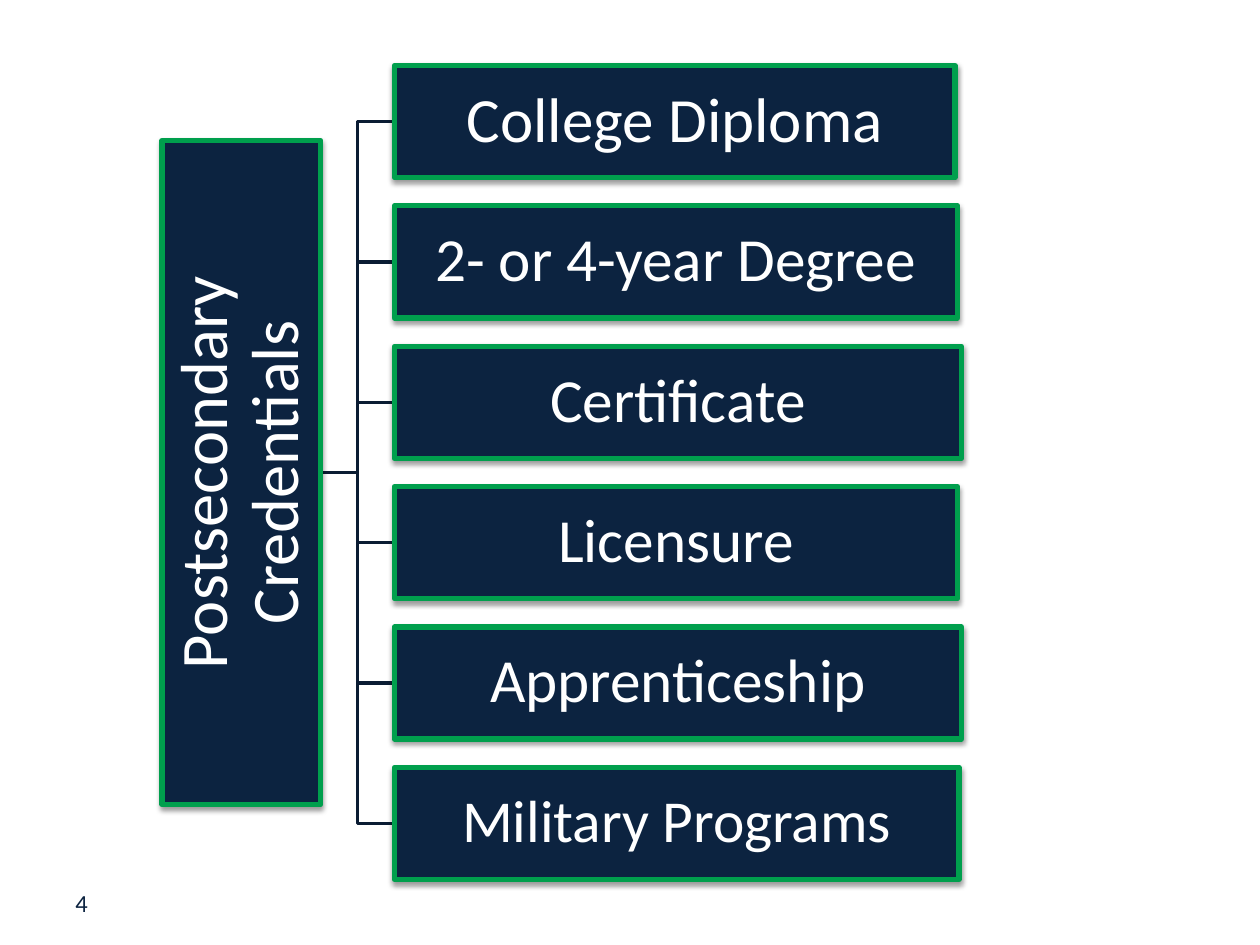
from lxml.etree import fromstring
from pptx import Presentation
from pptx.dml.color import RGBColor
from pptx.enum.shapes import MSO_SHAPE as Shape
from pptx.enum.text import MSO_ANCHOR as Anchor, PP_ALIGN as Align
from pptx.oxml.ns import qn
from pptx.util import Pt

# Content: label, box width, text size
ROOT = "Postsecondary Credentials"
BRANCHES = [
    ("College Diploma", 320.4, 36),
    ("2- or 4-year Degree", 321.8, 35),
    ("Certificate", 324, 35),
    ("Licensure", 321.8, 35),
    ("Apprenticeship", 324, 35),
    ("Military Programs", 322.6, 34),
]
PAGE_NUMBER = "4"

# Colours and layout, in points
NAVY, GREEN, WHITE, LINE = "0C2340", "009F4D", "FFFFFF", "0A1C33"
ROOT_LENGTH, ROOT_THICKNESS = 379.4, 90.7
ROOT_X, ROOT_Y = 138, 270
BRANCH_LEFT, BRANCH_HEIGHT, PITCH = 225.4, 64.1, 80.2

SHADOW = (
    '<a:outerShdw xmlns:a="http://schemas.openxmlformats.org/drawingml/2006/main" '
    'blurRad="39370" dist="20320" dir="5400000" rotWithShape="0">'
    '<a:srgbClr val="000000"><a:alpha val="38000"/></a:srgbClr></a:outerShdw>'
)


def colour(value):
    return RGBColor.from_string(value)


def write(box, text, size, color=WHITE, align=Align.CENTER, anchor=Anchor.MIDDLE,
          inset=None, spacing=None):
    frame = box.text_frame
    frame.word_wrap = True
    frame.vertical_anchor = anchor
    if inset is not None:
        frame.margin_left = frame.margin_right = Pt(inset)
        frame.margin_top = frame.margin_bottom = Pt(inset)
    para = frame.paragraphs[0]
    para.alignment = align
    para.line_spacing = spacing
    span = para.add_run()
    span.text = text
    span.font.name = "Calibri"
    span.font.size = Pt(size)
    span.font.color.rgb = colour(color)


def add_box(page, text, left, top, width, height, size, rotation=0):
    box = page.shapes.add_shape(Shape.RECTANGLE, Pt(left), Pt(top), Pt(width), Pt(height))
    box.rotation = rotation
    box.fill.solid()
    box.fill.fore_color.rgb = colour(NAVY)
    box.line.color.rgb = colour(GREEN)
    box.line.width = Pt(3)
    box.shadow.inherit = False
    box._element.spPr.find(qn("a:effectLst")).append(fromstring(SHADOW))
    write(box, text, size, inset=1.7, spacing=0.9)


def add_elbow(page, start, end):
    (x1, y1), (x2, y2) = start, end
    middle = (x1 + x2) / 2
    builder = page.shapes.build_freeform(Pt(x1), Pt(y1))
    builder.add_line_segments(
        [(Pt(x), Pt(y)) for x, y in ((middle, y1), (middle, y2), end)], close=False)
    elbow = builder.convert_to_shape()
    elbow.fill.background()
    elbow.line.color.rgb = colour(LINE)
    elbow.line.width = Pt(2)
    elbow.shadow.inherit = False


deck = Presentation()
deck.slide_width, deck.slide_height = Pt(720), Pt(540)
page = deck.slides.add_slide(deck.slide_layouts[6])

# Page number
number = page.shapes.add_textbox(Pt(36), Pt(504), Pt(156), Pt(24.5))
write(number, PAGE_NUMBER, 14, color=NAVY, align=Align.LEFT, anchor=Anchor.TOP)

# Branch centres, spread evenly about the root
first = ROOT_Y - PITCH * (len(BRANCHES) - 1) / 2
centres = [first + PITCH * index for index in range(len(BRANCHES))]

# Connecting lines, behind the boxes
for centre in centres:
    add_elbow(page, (ROOT_X + ROOT_THICKNESS / 2, ROOT_Y), (BRANCH_LEFT, centre))

# Root box, turned to read upwards
add_box(page, ROOT, ROOT_X - ROOT_LENGTH / 2, ROOT_Y - ROOT_THICKNESS / 2,
        ROOT_LENGTH, ROOT_THICKNESS, 38, rotation=270)

# Branch boxes
for (label, width, size), centre in zip(BRANCHES, centres):
    add_box(page, label, BRANCH_LEFT, centre - BRANCH_HEIGHT / 2, width, BRANCH_HEIGHT, size)

deck.save("out.pptx")
